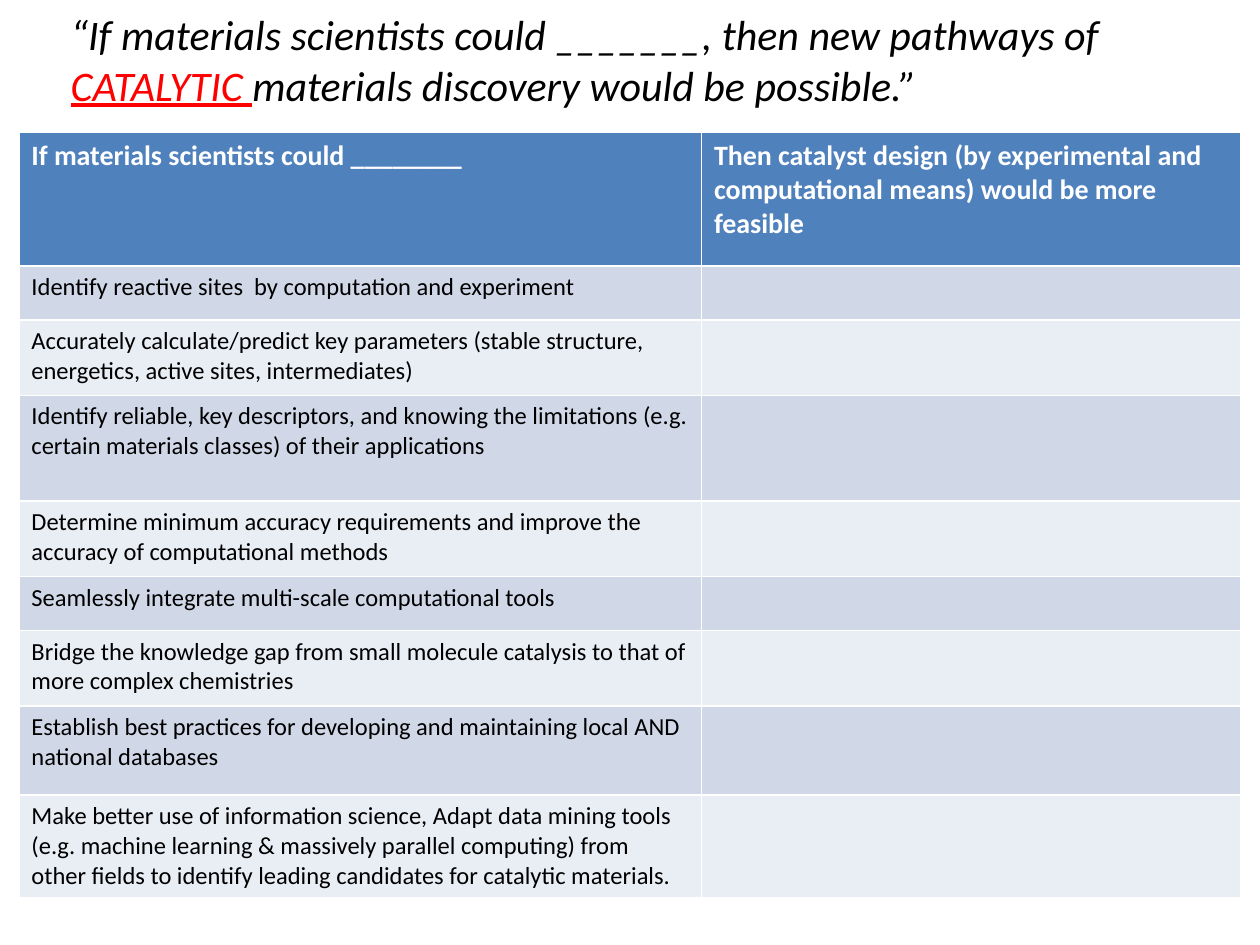
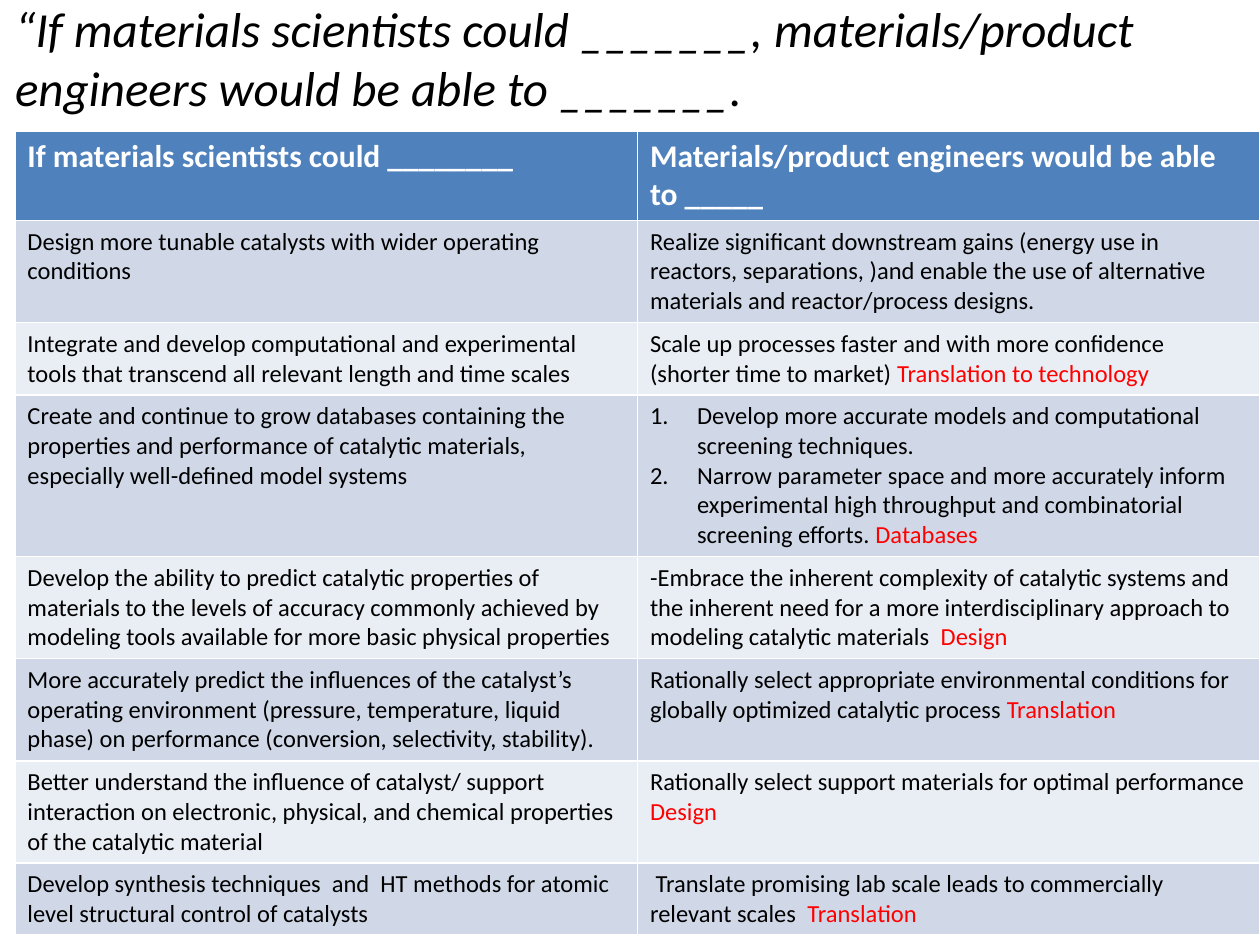
from lxml import etree
from pptx import Presentation
from pptx.dml.color import RGBColor
from pptx.enum import text
from pptx.oxml import ns
from pptx.util import Cm, Pt

FONT = "Calibri"
BLACK = RGBColor(0x00, 0x00, 0x00)
WHITE = RGBColor(0xFF, 0xFF, 0xFF)
RED = RGBColor(0xFF, 0x00, 0x00)
HEADER_BLUE = RGBColor(0x4F, 0x81, 0xBD)
BANDS = (RGBColor(0xE9, 0xED, 0xF4), RGBColor(0xD0, 0xD8, 0xE8))
BODY_SIZE = 14

# Each paragraph is a tuple of runs that alternate between plain and red.
PATHWAYS = {
    "title": ("“If materials scientists could _______, then new pathways of ", "CATALYTIC ",
              "materials discovery would be possible.”"),
    "title_size": 24,
    "title_box": (1.17, 0.05, 24.23, 3.33),
    "header_size": 16,
    "table_corner": (0.38, 2.67),
    "columns": (13.76, 10.88),
    "row_heights": (2.69, 1.09, 1.52, 2.13, 1.52, 1.09, 1.52, 1.8, 1.98),
    "rows": [
        ("If materials scientists could ________",
         "Then catalyst design (by experimental and computational means) would be more feasible"),
        ("Identify reactive sites  by computation and experiment", ""),
        ("Accurately calculate/predict key parameters (stable structure, energetics, "
         "active sites, intermediates)", ""),
        ("Identify reliable, key descriptors, and knowing the limitations (e.g. certain "
         "materials classes) of their applications", ""),
        ("Determine minimum accuracy requirements and improve the accuracy of "
         "computational methods", ""),
        ("Seamlessly integrate multi-scale computational tools", ""),
        ("Bridge the knowledge gap from small molecule catalysis to that of more complex "
         "chemistries", ""),
        ("Establish best practices for developing and maintaining local AND national "
         "databases", ""),
        ("Make better use of information science, Adapt data mining tools (e.g. machine "
         "learning & massively parallel computing) from other fields to identify leading "
         "candidates for catalytic materials.", ""),
    ],
}

ENGINEERS = {
    "title": ("“If materials scientists could _______, materials/product engineers would be "
              "able to _______.",),
    "title_size": 28,
    "title_box": (0.05, -0.15, 23.93, 2.64),
    "header_size": 18,
    "table_corner": (0.3, 2.64),
    "columns": (12.55, 12.55),
    "row_heights": (1.78, 2.04, 1.45, 3.25, 2.04, 2.04, 2.04, 1.45),
    "rows": [
        ("If materials scientists could ________",
         "Materials/product engineers would be able to _____"),
        ("Design more tunable catalysts with wider operating conditions",
         "Realize significant downstream gains (energy use in reactors, separations, )and "
         "enable the use of alternative materials and reactor/process designs."),
        ("Integrate and develop computational and experimental tools that transcend all "
         "relevant length and time scales",
         [("Scale up processes faster and with more confidence (shorter time to market) ",
           "Translation to technology")]),
        ("Create and continue to grow databases containing the properties and performance "
         "of catalytic materials, especially well-defined model systems",
         {"numbered": [
             ("Develop more accurate models and computational screening techniques.",),
             ("Narrow parameter space and more accurately inform experimental high "
              "throughput and combinatorial screening efforts. ", "Databases")]}),
        ("Develop the ability to predict catalytic properties of materials to the levels of "
         "accuracy commonly achieved by modeling tools available for more basic physical "
         "properties",
         [("-Embrace the inherent complexity of catalytic systems and the inherent need for "
           "a more interdisciplinary approach to modeling catalytic materials  ", "Design")]),
        ("More accurately predict the influences of the catalyst’s operating environment "
         "(pressure, temperature, liquid phase) on performance (conversion, selectivity, "
         "stability).",
         [("Rationally select appropriate environmental conditions for globally optimized "
           "catalytic process ", "Translation")]),
        ("Better understand the influence of catalyst/ support interaction on electronic, "
         "physical, and chemical properties of the catalytic material",
         [("Rationally select support materials for optimal performance",),
          ("", "Design")]),
        ("Develop synthesis techniques  and  HT methods for atomic level structural control "
         "of catalysts",
         [(" Translate promising lab scale leads to commercially relevant scales  ",
           "Translation")]),
    ],
}


def number_paragraph(paragraph):
    properties = paragraph._p.get_or_add_pPr()
    properties.set("marL", str(Cm(0.95)))
    properties.set("indent", str(-Cm(0.95)))
    bullet = etree.SubElement(properties, ns.qn("a:buAutoNum"))
    bullet.set("type", "arabicPeriod")


def write_text(frame, paragraphs, size, color=BLACK, bold=False, italic=False,
               underline_red=False, numbered=False):
    for index, runs in enumerate(paragraphs):
        paragraph = frame.add_paragraph() if index else frame.paragraphs[0]
        paragraph.alignment = text.PP_ALIGN.LEFT
        if numbered:
            number_paragraph(paragraph)
        for position, words in enumerate(runs):
            if not words:
                continue
            is_red = position % 2 == 1
            run = paragraph.add_run()
            run.text = words
            font = run.font
            font.name, font.size = FONT, Pt(size)
            font.bold, font.italic = bold, italic
            font.color.rgb = RED if is_red else color
            if is_red and underline_red:
                font.underline = True


def add_title(slide, content):
    title = slide.shapes.title
    title.left, title.top, title.width, title.height = map(Cm, content["title_box"])
    frame = title.text_frame
    frame.word_wrap = True
    frame.auto_size = text.MSO_AUTO_SIZE.NONE
    frame.vertical_anchor = text.MSO_ANCHOR.TOP
    write_text(frame, [content["title"]], content["title_size"], italic=True,
               underline_red=True)


def fill_cell(cell, value, row_index, header_size):
    is_header = row_index == 0
    cell.fill.solid()
    cell.fill.fore_color.rgb = HEADER_BLUE if is_header else BANDS[row_index % 2]
    numbered = isinstance(value, dict)
    if numbered:
        value = value["numbered"]
    paragraphs = [(value,)] if isinstance(value, str) else value
    write_text(cell.text_frame, paragraphs, header_size if is_header else BODY_SIZE,
               color=WHITE if is_header else BLACK, bold=is_header, numbered=numbered)


def add_statement_table(slide, content):
    rows, columns, heights = content["rows"], content["columns"], content["row_heights"]
    left, top = content["table_corner"]
    table = slide.shapes.add_table(len(rows), len(columns), Cm(left), Cm(top),
                                   Cm(sum(columns)), Cm(sum(heights))).table
    for column, width in zip(table.columns, columns):
        column.width = Cm(width)
    for row_index, (values, height) in enumerate(zip(rows, heights)):
        table.rows[row_index].height = Cm(height)
        for column_index, value in enumerate(values):
            fill_cell(table.cell(row_index, column_index), value, row_index,
                      content["header_size"])


def main():
    presentation = Presentation()
    presentation.slide_width, presentation.slide_height = Cm(25.4), Cm(19.05)
    title_only = presentation.slide_layouts[5]
    for content in (PATHWAYS, ENGINEERS):
        slide = presentation.slides.add_slide(title_only)
        add_title(slide, content)
        add_statement_table(slide, content)
    presentation.save("out.pptx")


if __name__ == "__main__":
    main()
